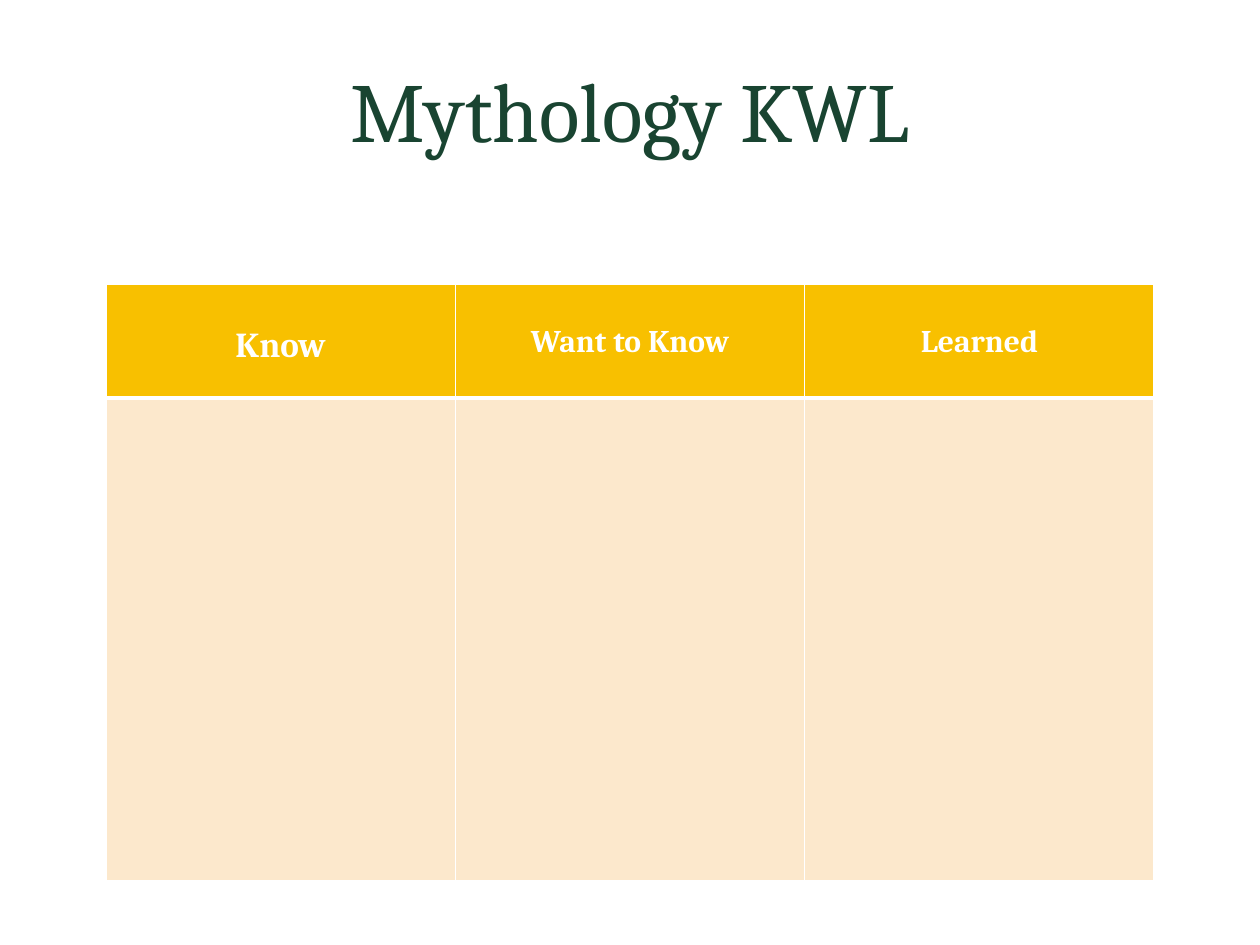
from dataclasses import dataclass

import lxml.etree
import pptx
import pptx.dml.color
import pptx.enum.text
import pptx.oxml.ns
import pptx.util


@dataclass(frozen=True)
class Theme:
    font: str = "Cambria"
    title: str = "194431"
    header: str = "F8C000"
    body: str = "FCE8CC"
    white: str = "FFFFFF"
    title_size: int = 48
    lead_size: int = 20
    head_size: int = 18
    thin: int = 1
    thick: int = 3


THEME = Theme()
WIDTH, HEIGHT = 10, 7.5
LEFT = 0.84
SPAN = WIDTH - 2 * LEFT
ROWS = (0.9, 3.83)
HEADINGS = (
    ("Know", THEME.lead_size, 0.33),
    ("Want to Know", THEME.head_size, 0.31),
    ("Learned", THEME.head_size, 0.31),
)


def inches(*values):
    return [pptx.util.Inches(v) for v in values]


def rgb(value):
    return pptx.dml.color.RGBColor.from_string(value)


def add_run(tf, text, size, color, bold=False):
    p = tf.paragraphs[0]
    p.alignment = pptx.enum.text.PP_ALIGN.CENTER
    r = p.add_run()
    r.text = text
    r.font.name = THEME.font
    r.font.size = pptx.util.Pt(size)
    r.font.bold = bold
    r.font.color.rgb = rgb(color)


def add_title(slide, text):
    tf = slide.shapes.add_textbox(*inches(LEFT, 0.09, SPAN, 1.55)).text_frame
    tf.word_wrap = True
    tf.vertical_anchor = pptx.enum.text.MSO_ANCHOR.MIDDLE
    add_run(tf, text, THEME.title_size, THEME.title)


def style_cell(cell, fill, top, bottom):
    qn = pptx.oxml.ns.qn
    tc_pr = cell._tc.get_or_add_tcPr()
    sides = {"L": THEME.thin, "R": THEME.thin, "T": top, "B": bottom}
    for side, width in sides.items():
        ln = lxml.etree.SubElement(tc_pr, qn(f"a:ln{side}"), w=str(pptx.util.Pt(width)))
        solid = lxml.etree.SubElement(ln, qn("a:solidFill"))
        lxml.etree.SubElement(solid, qn("a:srgbClr"), val=THEME.white)
    cell.fill.solid()
    cell.fill.fore_color.rgb = rgb(fill)


def add_chart_table(slide):
    frame = slide.shapes.add_table(
        len(ROWS), len(HEADINGS), *inches(LEFT, 2.26, SPAN, sum(ROWS))
    )
    table = frame.table
    for row, height in zip(table.rows, ROWS):
        row.height = pptx.util.Inches(height)
    for col, (text, size, top_gap) in enumerate(HEADINGS):
        head, body = table.cell(0, col), table.cell(1, col)
        style_cell(head, THEME.header, THEME.thin, THEME.thick)
        style_cell(body, THEME.body, THEME.thick, THEME.thin)
        head.margin_top = pptx.util.Inches(top_gap)
        add_run(head.text_frame, text, size, THEME.white, bold=True)


def main():
    prs = pptx.Presentation()
    prs.slide_width, prs.slide_height = inches(WIDTH, HEIGHT)
    slide = prs.slides.add_slide(prs.slide_layouts[6])
    add_title(slide, "Mythology KWL")
    add_chart_table(slide)
    prs.save("out.pptx")


if __name__ == "__main__":
    main()
